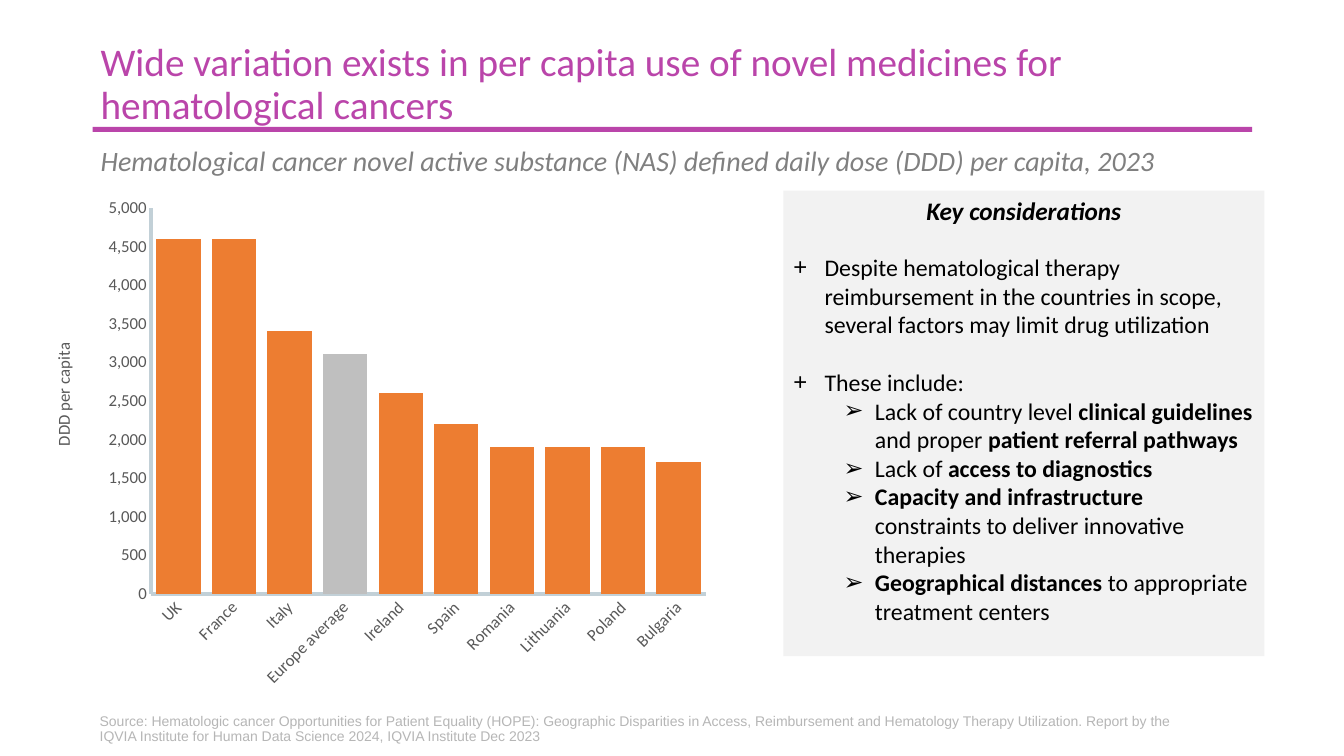
from dataclasses import dataclass

from lxml import etree
from pptx import Presentation
from pptx import util as u
from pptx.chart.data import CategoryChartData
from pptx.dml.color import RGBColor
from pptx.enum import chart as charts, shapes, text
from pptx.oxml import ns

Inches, Pt = u.Inches, u.Pt


@dataclass(frozen=True)
class Theme:
    font: str = "Calibri"
    source_font: str = "Arial"
    accent: str = "BA45AA"
    subtitle: str = "808080"
    source: str = "B6B6B6"
    panel: str = "F2F2F2"
    body: str = "000000"
    bar: str = "ED7D31"
    average: str = "BFBFBF"
    axis_text: str = "595959"
    axis_line: str = "C2D0D7"
    title_size: int = 28
    subtitle_size: int = 20
    heading_size: int = 18
    body_size: int = 17
    axis_size: int = 12
    source_size: int = 10


THEME = Theme()
AVERAGE = "Europe average"
DOSES = {
    "UK": 4600, "France": 4600, "Italy": 3400, AVERAGE: 3100, "Ireland": 2600,
    "Spain": 2200, "Romania": 1900, "Lithuania": 1900, "Poland": 1900, "Bulgaria": 1700,
}
# Each point: level, space before, runs as (wording, bold)
CONSIDERATIONS = [
    (0, 19.5, [("Despite hematological therapy reimbursement in the countries in scope, "
                "several factors may limit drug utilization", False)]),
    (0, 20.75, [("These include:", False)]),
    (1, 0, [("Lack of country level ", False), ("clinical guidelines ", True),
            ("and proper ", False), ("patient referral pathways", True)]),
    (1, 0, [("Lack of ", False), ("access to diagnostics", True)]),
    (1, 0, [("Capacity and infrastructure ", True),
            ("constraints to deliver innovative therapies", False)]),
    (1, 0, [("Geographical distances ", True), ("to appropriate treatment centers", False)]),
]
BULLETS = [("+", 0.31), ("➢", 0.81)]


def style(font, size, color, name=THEME.font, bold=False, italic=False):
    font.size, font.name, font.bold, font.italic = Pt(size), name, bold, italic
    font.color.rgb = RGBColor.from_string(color)


def add_rectangle(slide, box, color):
    shape = slide.shapes.add_shape(shapes.MSO_SHAPE.RECTANGLE, *map(Inches, box))
    shape.shadow.inherit = False
    shape.fill.solid()
    shape.fill.fore_color.rgb = RGBColor.from_string(color)
    shape.line.fill.background()
    return shape


def add_text(slide, box, wording, size, color, anchor=text.MSO_ANCHOR.MIDDLE, **look):
    frame = slide.shapes.add_textbox(*map(Inches, box)).text_frame
    frame.word_wrap = True
    frame.vertical_anchor = anchor
    frame.text = wording
    paragraph = frame.paragraphs[0]
    paragraph.line_spacing = 0.9
    style(paragraph.runs[0].font, size, color, **look)
    return frame


def set_bullet(paragraph, level):
    symbol, margin = BULLETS[level]
    paragraph.level = level
    properties = paragraph._p.get_or_add_pPr()
    properties.set("marL", str(Inches(margin)))
    properties.set("indent", str(Inches(-0.31)))
    etree.SubElement(properties, ns.qn("a:buFont"), typeface="Arial")
    etree.SubElement(properties, ns.qn("a:buChar"), char=symbol)


def add_considerations(slide, box):
    frame = add_rectangle(slide, box, THEME.panel).text_frame
    frame.word_wrap = True
    frame.vertical_anchor = text.MSO_ANCHOR.TOP
    frame.text = "Key considerations"
    heading = frame.paragraphs[0]
    heading.alignment = text.PP_ALIGN.CENTER
    style(heading.runs[0].font, THEME.heading_size, THEME.body, bold=True, italic=True)
    for level, space, runs in CONSIDERATIONS:
        paragraph = frame.add_paragraph()
        paragraph.alignment = text.PP_ALIGN.LEFT
        paragraph.space_before = Pt(space)
        set_bullet(paragraph, level)
        for wording, bold in runs:
            run = paragraph.add_run()
            run.text = wording
            style(run.font, THEME.body_size, THEME.body, bold=bold)


def place(element, index, **fractions):
    """Give a chart part a manual layout, in fractions of the chart."""
    for old in element.findall(ns.qn("c:layout")):
        element.remove(old)
    layout = etree.Element(ns.qn("c:layout"))
    manual = etree.SubElement(layout, ns.qn("c:manualLayout"))
    if "w" in fractions:
        etree.SubElement(manual, ns.qn("c:layoutTarget"), val="inner")
    for side in ("x", "y"):
        etree.SubElement(manual, ns.qn(f"c:{side}Mode"), val="edge")
    for key, value in fractions.items():
        etree.SubElement(manual, ns.qn(f"c:{key}"), val=str(value))
    element.insert(index, layout)


def style_axis(axis):
    axis.has_major_gridlines = False
    axis.major_tick_mark = axis.minor_tick_mark = charts.XL_TICK_MARK.NONE
    axis.format.line.color.rgb = RGBColor.from_string(THEME.axis_line)
    axis.format.line.width = Pt(3)
    style(axis.tick_labels.font, THEME.axis_size, THEME.axis_text)


def add_dose_chart(slide, box):
    data = CategoryChartData(number_format="#,##0")
    data.categories = list(DOSES)
    data.add_series("DDD per capita", list(DOSES.values()))
    chart = slide.shapes.add_chart(
        charts.XL_CHART_TYPE.COLUMN_CLUSTERED, *map(Inches, box), data).chart
    chart.has_legend = chart.has_title = False
    style(chart.font, 10, THEME.body)

    plot = chart.plots[0]
    plot.gap_width, plot.vary_by_categories = 25, False
    series = plot.series[0]
    average = series.points[list(DOSES).index(AVERAGE)]
    for part, color in ((series, THEME.bar), (average, THEME.average)):
        part.format.fill.solid()
        part.format.fill.fore_color.rgb = RGBColor.from_string(color)

    countries, doses = chart.category_axis, chart.value_axis
    for axis in (countries, doses):
        style_axis(axis)
    body = countries._element.find(ns.qn("c:txPr")).find(ns.qn("a:bodyPr"))
    body.set("rot", "-2700000")
    body.set("vert", "horz")
    doses.minimum_scale, doses.maximum_scale, doses.major_unit = 0, 5000, 500
    doses.tick_labels.number_format = "#,##0"
    doses.tick_labels.number_format_is_linked = False

    frame = doses.axis_title.text_frame
    frame.text = "DDD per capita"
    style(frame.paragraphs[0].runs[0].font, THEME.axis_size, THEME.axis_text)
    place(doses.axis_title._element, 1, x=0.01, y=0.3)
    place(chart._chartSpace.chart.plotArea, 0, x=0.16, y=0.04, w=0.82, h=0.76)


def main():
    presentation = Presentation()
    presentation.slide_width, presentation.slide_height = Inches(13.33), Inches(7.5)
    slide = presentation.slides.add_slide(presentation.slide_layouts[6])

    add_rectangle(slide, (0.92, 1.26, 11.5, 0.05), THEME.accent)
    add_text(slide, (0.9, 1.36, 11.5, 0.5),
             "Hematological cancer novel active substance (NAS) defined daily dose (DDD) "
             "per capita, 2023", THEME.subtitle_size, THEME.subtitle, italic=True)
    add_text(slide, (0.9, 0.36, 11.5, 0.97),
             "Wide variation exists in per capita use of novel medicines for "
             "hematological cancers", THEME.title_size, THEME.accent)
    source = add_text(
        slide, (0.89, 7.04, 11.19, 0.35),
        "Source: Hematologic cancer Opportunities for Patient Equality (HOPE): Geographic "
        "Disparities in Access, Reimbursement and Hematology Therapy Utilization. Report by "
        "the IQVIA Institute for Human Data Science 2024, IQVIA Institute Dec 2023",
        THEME.source_size, THEME.source, text.MSO_ANCHOR.BOTTOM, name=THEME.source_font)
    source.margin_bottom = 0
    add_dose_chart(slide, (0.42, 1.86, 6.72, 5.04))
    add_considerations(slide, (7.77, 1.89, 4.77, 4.62))
    presentation.save("out.pptx")


if __name__ == "__main__":
    main()
